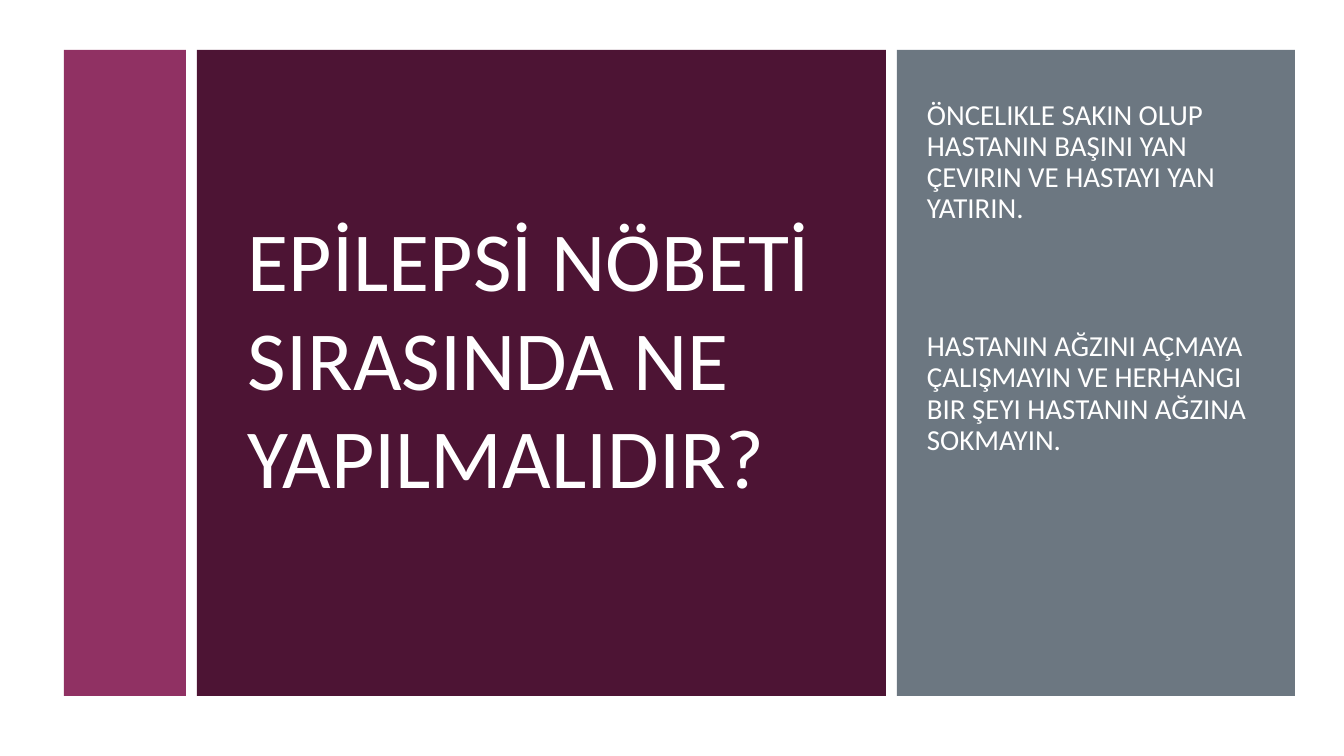
from pptx import Presentation
from pptx.dml.color import RGBColor
from pptx.enum.shapes import MSO_SHAPE
from pptx.enum.text import MSO_ANCHOR
from pptx.util import Emu, Pt

WHITE = RGBColor(0xFF, 0xFF, 0xFF)
PLUM = RGBColor(0x4D, 0x14, 0x34)
GRAY = RGBColor(0x6C, 0x77, 0x81)
MAGENTA = RGBColor(0x90, 0x31, 0x63)

TITLE = ["EPİLEPSİ NÖBETİ SIRASINDA NE YAPILMALIDIR?"]
ADVICE = [
    "ÖNCELIKLE SAKIN OLUP HASTANIN BAŞINI YAN ÇEVIRIN VE HASTAYI YAN YATIRIN.",
    "HASTANIN AĞZINI AÇMAYA ÇALIŞMAYIN VE HERHANGI BIR ŞEYI HASTANIN AĞZINA SOKMAYIN.",
]
PANELS = [(122, MAGENTA), (689, PLUM), (398, GRAY)]  # width, colour
LEFT, TOP, HEIGHT, GAP = 64, 50, 646, 11


def px(n):
    """Turn pixels into EMU."""
    return Emu(round(n * 914400 / 100.8))


def add_panel(s, x, width, color):
    """Draw one full-height colour panel."""
    sp = s.shapes.add_shape(MSO_SHAPE.RECTANGLE, px(x), px(TOP), px(width), px(HEIGHT))
    sp.shadow.inherit = False
    sp.fill.solid()
    sp.fill.fore_color.rgb = color
    sp.line.fill.background()


def add_text(s, paragraphs, box, size, spacing, anchor=MSO_ANCHOR.TOP, gap=0):
    """Add white text, with a gap in points between paragraphs."""
    tf = s.shapes.add_textbox(*map(px, box)).text_frame
    tf.word_wrap = True
    tf.vertical_anchor = anchor
    tf.margin_left = tf.margin_right = tf.margin_top = tf.margin_bottom = 0
    for i, text in enumerate(paragraphs):
        p = tf.paragraphs[0] if i == 0 else tf.add_paragraph()
        p.line_spacing = spacing
        p.space_before = Pt(gap if i else 0)
        r = p.add_run()
        r.text = text
        r.font.name = "Calibri"
        r.font.size = Pt(size)
        r.font.color.rgb = WHITE


prs = Presentation()
prs.slide_width, prs.slide_height = px(1344), px(756)
s = prs.slides.add_slide(prs.slide_layouts[6])

x = LEFT
for width, color in PANELS:
    add_panel(s, x, width, color)
    x += width + GAP

add_text(s, TITLE, (248, 99, 589, 523), size=60, spacing=0.98, anchor=MSO_ANCHOR.MIDDLE)
add_text(s, ADVICE, (927, 100, 330, 520), size=20.7, spacing=0.9, gap=76)

prs.save("out.pptx")
